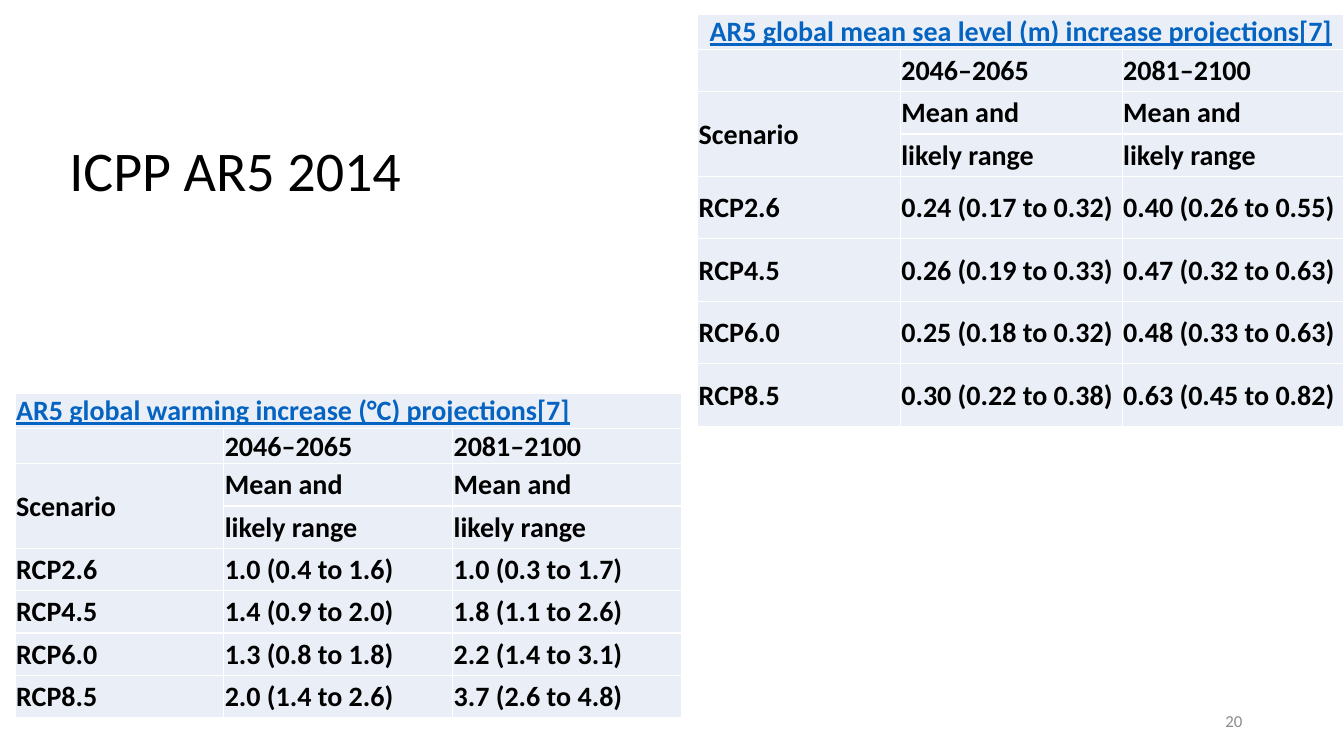
from lxml.etree import SubElement
from pptx import Presentation
from pptx.dml.color import RGBColor
from pptx.enum.text import MSO_ANCHOR, PP_ALIGN
from pptx.oxml.ns import qn
from pptx.util import Inches, Pt

PERIODS = [
    ["", "2046–2065", "2081–2100"],
    ["Scenario", "Mean and", "Mean and"],
    ["", "likely range", "likely range"],
]
WARMING = [
    ["RCP2.6", "1.0 (0.4 to 1.6)", "1.0 (0.3 to 1.7)"],
    ["RCP4.5", "1.4 (0.9 to 2.0)", "1.8 (1.1 to 2.6)"],
    ["RCP6.0", "1.3 (0.8 to 1.8)", "2.2 (1.4 to 3.1)"],
    ["RCP8.5", "2.0 (1.4 to 2.6)", "3.7 (2.6 to 4.8)"],
]
SEA_LEVEL = [
    ["RCP2.6", "0.24 (0.17 to 0.32)", "0.40 (0.26 to 0.55)"],
    ["RCP4.5", "0.26 (0.19 to 0.33)", "0.47 (0.32 to 0.63)"],
    ["RCP6.0", "0.25 (0.18 to 0.32)", "0.48 (0.33 to 0.63)"],
    ["RCP8.5", "0.30 (0.22 to 0.38)", "0.63 (0.45 to 0.82)"],
]


def rgb(value):
    """Turn a hex string into a colour."""
    return RGBColor.from_string(value)


def write(frame, text, size=20, color="000000", bold=False, underline=False,
          align=PP_ALIGN.LEFT):
    """Write one formatted paragraph into a text frame."""
    paragraph = frame.paragraphs[0]
    paragraph.alignment = align
    run = paragraph.add_run()
    run.text = text
    run.font.name = "Calibri"
    run.font.size = Pt(size)
    run.font.bold = bold
    run.font.underline = underline
    run.font.color.rgb = rgb(color)


def style_cell(cell):
    """Give a cell its tight margins, white borders and pale fill."""
    cell.margin_left = cell.margin_right = cell.margin_top = Inches(0.01)
    cell.margin_bottom = 0
    cell.vertical_anchor = MSO_ANCHOR.MIDDLE
    properties = cell._tc.get_or_add_tcPr()
    for side in ("a:lnL", "a:lnR", "a:lnT", "a:lnB"):
        border = SubElement(properties, qn(side), w=str(Pt(1)))
        fill = SubElement(border, qn("a:solidFill"))
        SubElement(fill, qn("a:srgbClr"), val="FFFFFF")
    cell.fill.solid()
    cell.fill.fore_color.rgb = rgb("EAEFF7")


def add_projections(slide, box, heading, scenarios, widths, heights, align, anchor):
    """Add a projection table with a spanning heading."""
    rows = [[heading, "", ""]] + PERIODS + scenarios
    table = slide.shapes.add_table(len(rows), len(widths), *map(Inches, box)).table
    for column, width in zip(table.columns, widths):
        column.width = Inches(width)
    for row, height in zip(table.rows, heights):
        row.height = Inches(height)
    for r, texts in enumerate(rows):
        for c, text in enumerate(texts):
            cell = table.cell(r, c)
            style_cell(cell)
            if text and r:
                write(cell.text_frame, text, bold=True)
    title = table.cell(0, 0)
    write(title.text_frame, heading, color="0563C1", bold=True, underline=True,
          align=align)
    title.vertical_anchor = anchor
    title.merge(table.cell(0, 2))
    table.cell(2, 0).merge(table.cell(3, 0))


def add_label(slide, box, text, wrap=True, anchor=MSO_ANCHOR.TOP, **style):
    """Add a text box holding one line."""
    frame = slide.shapes.add_textbox(*map(Inches, box)).text_frame
    frame.word_wrap = wrap
    frame.vertical_anchor = anchor
    write(frame, text, **style)


def main():
    """Build the slide and save it."""
    deck = Presentation()
    deck.slide_width, deck.slide_height = Inches(13.33), Inches(7.5)
    slide = deck.slides.add_slide(deck.slide_layouts[6])
    add_projections(slide, (0.15, 3.9, 6.6, 3.19),
                    "AR5 global warming increase (°C) projections[7]", WARMING,
                    [2.07, 2.27, 2.27], [0.34] * 2 + [0.42] * 6,
                    PP_ALIGN.LEFT, MSO_ANCHOR.BOTTOM)
    add_projections(slide, (6.92, 0.14, 6.42, 4.09),
                    "AR5 global mean sea level (m) increase projections[7]", SEA_LEVEL,
                    [2.01, 2.2, 2.2], [0.34] + [0.42] * 3 + [0.62] * 4,
                    PP_ALIGN.CENTER, MSO_ANCHOR.MIDDLE)
    add_label(slide, (0.59, 1.3, 3.52, 0.77), "ICPP AR5 2014", wrap=False, size=40)
    add_label(slide, (9.42, 6.95, 3, 0.4), "20", anchor=MSO_ANCHOR.MIDDLE, size=12,
              color="8C8C8C", align=PP_ALIGN.RIGHT)
    deck.save("out.pptx")


if __name__ == "__main__":
    main()
